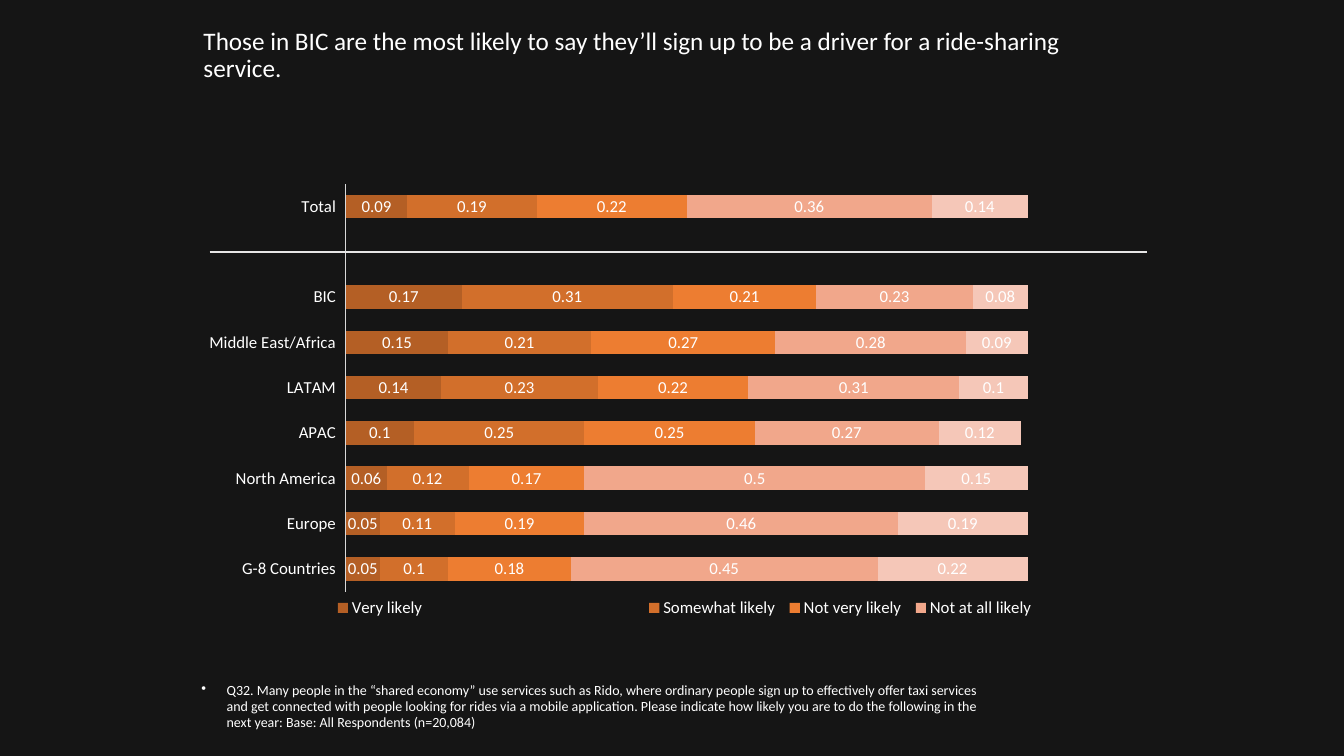
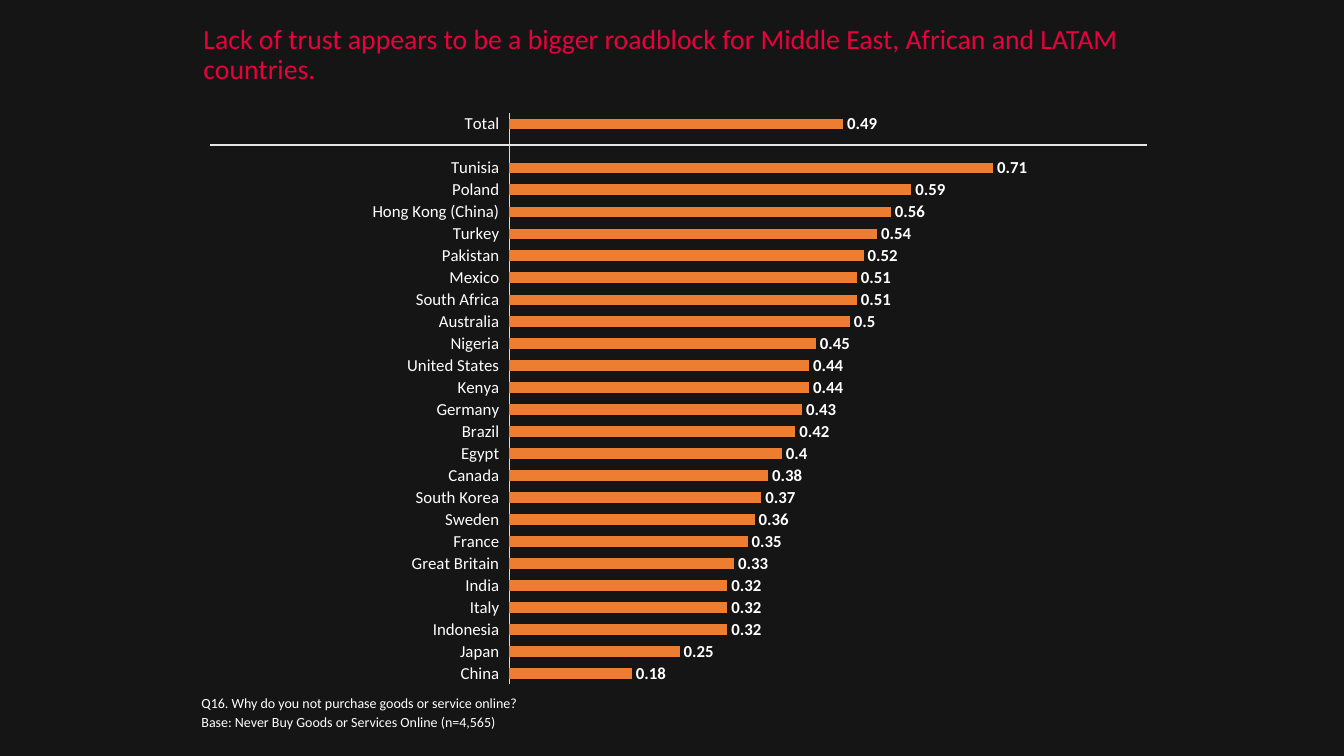
from dataclasses import dataclass
from typing import Optional

from lxml import etree
from pptx import Presentation
from pptx.chart.data import CategoryChartData
from pptx.dml.color import RGBColor
from pptx.enum.chart import XL_CHART_TYPE, XL_LABEL_POSITION, XL_LEGEND_POSITION, XL_TICK_LABEL_POSITION, XL_TICK_MARK
from pptx.enum.shapes import MSO_CONNECTOR
from pptx.enum.text import MSO_ANCHOR, PP_ALIGN
from pptx.oxml.ns import qn
from pptx.util import Inches, Pt

STACKED = XL_CHART_TYPE.BAR_STACKED
CLUSTERED = XL_CHART_TYPE.BAR_CLUSTERED
CENTER = XL_LABEL_POSITION.CENTER
OUTSIDE_END = XL_LABEL_POSITION.OUTSIDE_END
LEGEND_BOTTOM = XL_LEGEND_POSITION.BOTTOM
LABELS_LOW = XL_TICK_LABEL_POSITION.LOW
NO_TICK = XL_TICK_MARK.NONE
STRAIGHT = MSO_CONNECTOR.STRAIGHT
MIDDLE = MSO_ANCHOR.MIDDLE
BOTTOM = MSO_ANCHOR.BOTTOM
LEFT = PP_ALIGN.LEFT

FONT = "Calibri"
COLORS = {
    "background": "151515",
    "text": "FFFFFF",
    "accent": "E6023B",
    "axis": "D9D9D9",
    "divider": "E7E6E6",
    "very": "B45F25",
    "somewhat": "D26F2B",
    "orange": "ED7D31",
    "not_at_all": "F1A78B",
    "unavailable": "F5C7B8",
}
LABEL_SIZE = 12
NOTE_BOTTOM = 7.3
PLOT_LEFT, PLOT_WIDTH, PLOT_TOP = 0.175, 0.805, 0.02


@dataclass(frozen=True)
class Series:
    name: str
    color: str
    values: list[Optional[float]]


@dataclass(frozen=True)
class BarChart:
    kind: int
    left: float
    top: float
    height: float
    plot_height: float
    gap: int
    categories: list[str]
    series: list[Series]
    label_position: int
    bold_labels: bool = False
    legend: bool = False


@dataclass(frozen=True)
class SurveySlide:
    title: str
    title_size: float
    title_color: str
    divider_top: float
    note_height: float
    note: list[str]
    bulleted: bool
    chart: BarChart


LIKELIHOOD_CHART = BarChart(
    STACKED, 1.96, 1.73, 4.6, 0.88, 94,
    ["Total", "", "BIC", "Middle East/Africa", "LATAM", "APAC",
     "North America", "Europe", "G-8 Countries"],
    [
        Series("Very likely", "very", [0.09, None, 0.17, 0.15, 0.14, 0.1, 0.06, 0.05, 0.05]),
        Series("Somewhat likely", "somewhat", [0.19, None, 0.31, 0.21, 0.23, 0.25, 0.12, 0.11, 0.1]),
        Series("Not very likely", "orange", [0.22, None, 0.21, 0.27, 0.22, 0.25, 0.17, 0.19, 0.18]),
        Series("Not at all likely", "not_at_all", [0.36, None, 0.23, 0.28, 0.31, 0.27, 0.5, 0.46, 0.45]),
        Series("These services aren’t available in my area", "unavailable",
               [0.14, None, 0.08, 0.09, 0.1, 0.12, 0.15, 0.19, 0.22]),
    ],
    CENTER, legend=True,
)

TRUST_CHART = BarChart(
    CLUSTERED, 3.58, 1, 5.91, 0.96, 115,
    ["Total", "", "Tunisia", "Poland", "Hong Kong (China)", "Turkey", "Pakistan",
     "Mexico", "South Africa", "Australia", "Nigeria", "United States", "Kenya",
     "Germany", "Brazil", "Egypt", "Canada", "South Korea", "Sweden", "France",
     "Great Britain", "India", "Italy", "Indonesia", "Japan", "China"],
    [Series("Series 1", "orange",
            [0.49, None, 0.71, 0.59, 0.56, 0.54, 0.52, 0.51, 0.51, 0.5, 0.45, 0.44, 0.44,
             0.43, 0.42, 0.4, 0.38, 0.37, 0.36, 0.35, 0.33, 0.32, 0.32, 0.32, 0.25, 0.18])],
    OUTSIDE_END, bold_labels=True,
)

SLIDES = [
    SurveySlide(
        "Those in BIC are the most likely to say they’ll sign up to be a driver for a ride-sharing service.",
        18, "text", 2.5, 0.58,
        ["Q32. Many people in the “shared economy” use services such as Rido, where ordinary people "
         "sign up to effectively offer taxi services and get connected with people looking for rides "
         "via a mobile application. Please indicate how likely you are to do the following in the "
         "next year: Base: All Respondents (n=20,084)"],
        True, LIKELIHOOD_CHART,
    ),
    SurveySlide(
        "Lack of trust appears to be a bigger roadblock for Middle East, African and LATAM countries.",
        19.8, "accent", 1.44, 0.45,
        ["Q16. Why do you not purchase goods or service online?",
         "Base: Never Buy Goods or Services Online (n=4,565)"],
        False, TRUST_CHART,
    ),
]


def rgb(name: str) -> RGBColor:
    return RGBColor.from_string(COLORS[name])


def style_font(font, size: float, color: str = "text", bold: bool = False) -> None:
    font.name = FONT
    font.size = Pt(size)
    font.bold = bold
    font.color.rgb = rgb(color)


def add_text(slide, box: tuple, lines: list[str], size: float, color: str,
             anchor: int, line_spacing: float, space_before: float = 0) -> list:
    text_frame = slide.shapes.add_textbox(*map(Inches, box)).text_frame
    text_frame.word_wrap = True
    text_frame.vertical_anchor = anchor
    text_frame.text = "\n".join(lines)
    for paragraph in text_frame.paragraphs:
        paragraph.alignment = LEFT
        paragraph.line_spacing = line_spacing
        paragraph.space_before = Pt(space_before)
        for run in paragraph.runs:
            style_font(run.font, size, color)
    return list(text_frame.paragraphs)


def add_bullet(paragraph) -> None:
    properties = paragraph._p.get_or_add_pPr()
    properties.set("marL", str(Inches(0.25)))
    properties.set("indent", str(-Inches(0.25)))
    etree.SubElement(properties, qn("a:buChar")).set("char", "•")


def set_layout(parent, index: int, inner: bool, x: float, y: float, w: float, h: float) -> None:
    for existing in parent.findall(qn("c:layout")):
        parent.remove(existing)
    layout = etree.Element(qn("c:layout"))
    manual = etree.SubElement(layout, qn("c:manualLayout"))
    settings = [("layoutTarget", "inner")] if inner else []
    settings += [("xMode", "edge"), ("yMode", "edge"), ("x", x), ("y", y), ("w", w), ("h", h)]
    for tag, value in settings:
        etree.SubElement(manual, qn(f"c:{tag}")).set("val", str(value))
    parent.insert(index, layout)


def add_legend(chart) -> None:
    chart.has_legend = True
    chart.legend.position = LEGEND_BOTTOM
    chart.legend.include_in_layout = False
    style_font(chart.legend.font, LABEL_SIZE)
    legend = next(chart.element.iter(qn("c:legend")))
    set_layout(legend, 1, False, 0.155, 0.9, 0.84, 0.07)


def style_axes(chart) -> None:
    category_axis = chart.category_axis
    category_axis.reverse_order = True
    category_axis.has_major_gridlines = False
    category_axis.major_tick_mark = NO_TICK
    category_axis.minor_tick_mark = NO_TICK
    category_axis.tick_label_position = LABELS_LOW
    category_axis.format.line.color.rgb = rgb("axis")
    category_axis.format.line.width = Pt(0.75)
    style_font(category_axis.tick_labels.font, LABEL_SIZE)
    value_axis = chart.value_axis
    value_axis.minimum_scale = 0
    value_axis.maximum_scale = 1
    value_axis.has_major_gridlines = False
    value_axis.visible = False


def add_bar_chart(slide, bar_chart: BarChart) -> None:
    data = CategoryChartData()
    data.categories = bar_chart.categories
    for series in bar_chart.series:
        data.add_series(series.name, series.values)
    box = (bar_chart.left, bar_chart.top, 8.4, bar_chart.height)
    chart = slide.shapes.add_chart(bar_chart.kind, *map(Inches, box), data).chart
    chart.has_title = False
    chart.has_legend = False
    style_font(chart.font, 10)
    style_axes(chart)
    plot = chart.plots[0]
    plot.vary_by_categories = False
    plot.gap_width = bar_chart.gap
    if bar_chart.kind == STACKED:
        plot.overlap = 100
    for series, drawn in zip(bar_chart.series, plot.series):
        drawn.invert_if_negative = False
        drawn.format.fill.solid()
        drawn.format.fill.fore_color.rgb = rgb(series.color)
        labels = drawn.data_labels
        labels.show_value = True
        labels.position = bar_chart.label_position
        style_font(labels.font, LABEL_SIZE, bold=bar_chart.bold_labels)
    plot_area = next(chart.element.iter(qn("c:plotArea")))
    set_layout(plot_area, 0, True, PLOT_LEFT, PLOT_TOP, PLOT_WIDTH, bar_chart.plot_height)
    if bar_chart.legend:
        add_legend(chart)


def add_divider(slide, top: float) -> None:
    divider = slide.shapes.add_connector(
        STRAIGHT, Inches(2.08), Inches(top), Inches(11.38), Inches(top))
    divider.line.color.rgb = rgb("divider")
    divider.line.width = Pt(1)
    etree.SubElement(divider._element.spPr, qn("a:effectLst"))


def add_survey_slide(presentation, content: SurveySlide) -> None:
    slide = presentation.slides.add_slide(presentation.slide_layouts[6])
    slide.background.fill.solid()
    slide.background.fill.fore_color.rgb = rgb("background")
    note_box = (1.9, NOTE_BOTTOM - content.note_height, 7.94, content.note_height)
    note = add_text(slide, note_box, content.note, 10, "text", BOTTOM, 0.95, 2)
    if content.bulleted:
        for paragraph in note:
            add_bullet(paragraph)
    add_text(slide, (1.92, 0.25, 9.46, 0.61), [content.title],
             content.title_size, content.title_color, MIDDLE, 0.9)
    add_bar_chart(slide, content.chart)
    add_divider(slide, content.divider_top)


def main() -> None:
    presentation = Presentation()
    presentation.slide_width = Inches(13.33)
    presentation.slide_height = Inches(7.5)
    for content in SLIDES:
        add_survey_slide(presentation, content)
    presentation.save("out.pptx")


if __name__ == "__main__":
    main()
